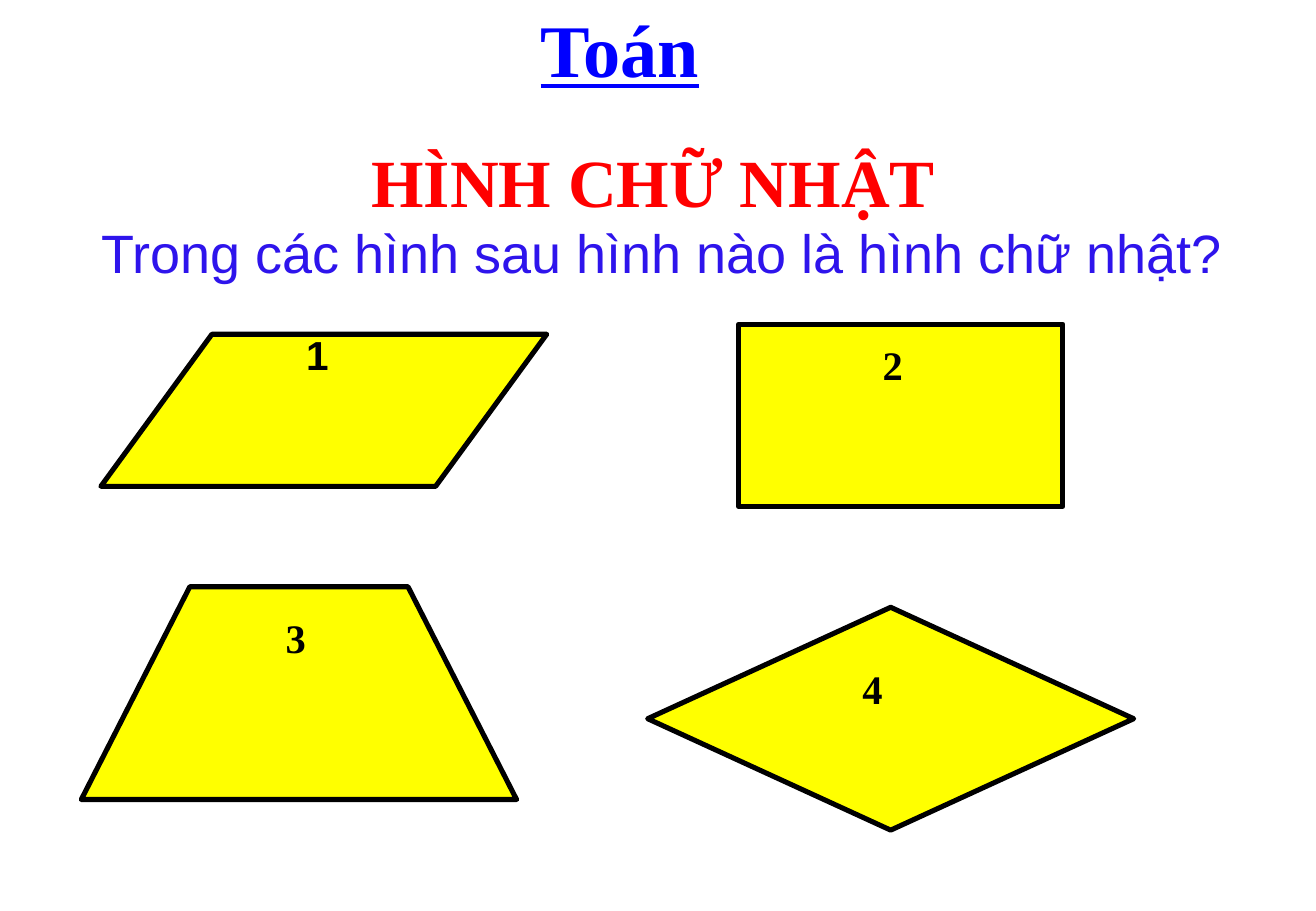
from pptx import Presentation
from pptx.dml.color import RGBColor
from pptx.enum.shapes import MSO_SHAPE
from pptx.enum.text import MSO_ANCHOR, MSO_AUTO_SIZE, PP_ALIGN
from pptx.util import Cm, Pt

BLACK = RGBColor(0x00, 0x00, 0x00)
YELLOW = RGBColor(0xFF, 0xFF, 0x00)
RED = RGBColor(0xFF, 0x00, 0x00)
BLUE = RGBColor(0x00, 0x00, 0xFF)
VIOLET = RGBColor(0x2E, 0x14, 0xEC)

SANS, SERIF = "Arial", "Times New Roman"
CENTER, LEFT = PP_ALIGN.CENTER, PP_ALIGN.LEFT
MIDDLE, TOP = MSO_ANCHOR.MIDDLE, MSO_ANCHOR.TOP
TITLE_ONLY = 5

# Preset, adjustment, box in cm, label, label font, label offset in the box
FIGURES = [
    (MSO_SHAPE.PARALLELOGRAM, 0.73, (2.11, 6.99, 9.32, 3.18), "1", SANS, (4.04, -0.21)),
    (MSO_SHAPE.RECTANGLE, None, (15.44, 6.78, 6.78, 3.81), "2", SERIF, (2.76, 0.21)),
    (MSO_SHAPE.TRAPEZOID, 0.51, (1.7, 12.27, 9.1, 4.45), "3", SERIF, (4.02, 0.43)),
    (MSO_SHAPE.DIAMOND, None, (13.54, 12.7, 10.16, 4.66), "4", SERIF, (4.24, 1.07)),
]


def write(sp, text, font, size, color, bold=True, align=LEFT, anchor=TOP):
    tf = sp.text_frame
    tf.text = text
    tf.word_wrap = True
    tf.auto_size = MSO_AUTO_SIZE.NONE
    tf.vertical_anchor = anchor
    p = tf.paragraphs[0]
    p.alignment = align
    r = p.runs[0]
    r.font.name = font
    r.font.size = Pt(size)
    r.font.bold = bold
    r.font.color.rgb = color
    return r


def add_text(s, box, *args, **kwargs):
    sp = s.shapes.add_textbox(*map(Cm, box))
    return write(sp, *args, **kwargs)


def add_headings(s, left, top):
    subject = add_text(s, (left + 9.58, top, 13.46, 2.13), "Toán", SERIF, 44, BLUE)
    subject.font.underline = True
    add_text(s, (left + 5.3, top + 3.15, 13.77, 1.35), "HÌNH CHỮ NHẬT",
             SERIF, 40, RED, align=CENTER, anchor=MIDDLE)
    title = s.shapes.title
    title.left, title.top = Cm(left), Cm(top + 4.24)
    title.width, title.height = Cm(24.77), Cm(2.16)
    write(title, "Trong các hình sau hình nào là hình chữ nhật?",
          SANS, 32, VIOLET, bold=False, align=CENTER, anchor=MIDDLE)


def add_figure(s, preset, adjustment, box, label, font, offset):
    sp = s.shapes.add_shape(preset, *map(Cm, box))
    if adjustment is not None:
        sp.adjustments[0] = adjustment
    sp.shadow.inherit = False
    sp.fill.solid()
    sp.fill.fore_color.rgb = YELLOW
    sp.line.color.rgb = BLACK
    sp.line.width = Pt(3)
    left, top = box[0] + offset[0], box[1] + offset[1]
    add_text(s, (left, top, 1.5, 1.27), label, font, 24, BLACK)


def main():
    prs = Presentation()
    prs.slide_width, prs.slide_height = Cm(27.51), Cm(19.05)
    s = prs.slides.add_slide(prs.slide_layouts[TITLE_ONLY])
    add_headings(s, 1.47, -0.05)
    for figure in FIGURES:
        add_figure(s, *figure)
    prs.save("out.pptx")


if __name__ == "__main__":
    main()
